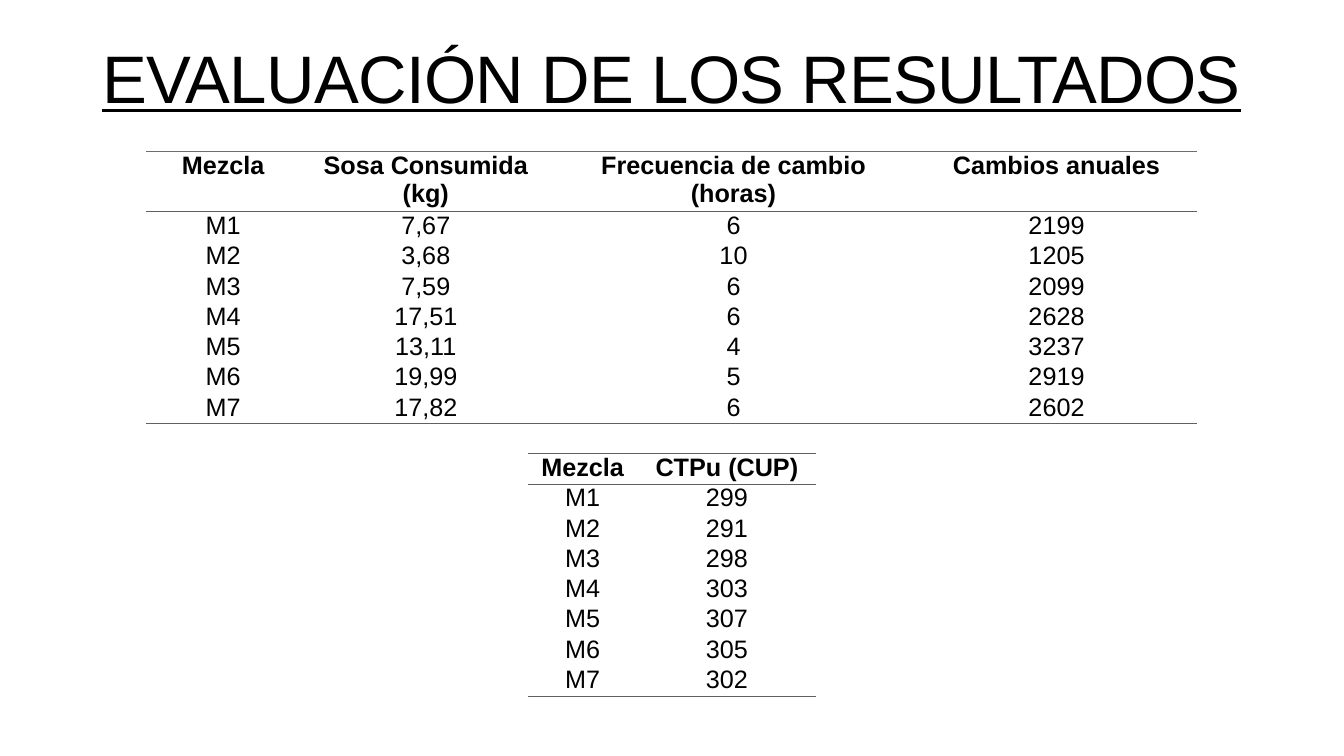
from lxml import etree
from pptx import Presentation
from pptx.dml.color import RGBColor
from pptx.enum.text import MSO_ANCHOR, PP_ALIGN
from pptx.oxml.ns import qn
from pptx.util import Cm, Pt

BLACK = RGBColor(0x00, 0x00, 0x00)
BLUE = RGBColor(0x44, 0x72, 0xC4)
GRAY = RGBColor(0x60, 0x60, 0x60)
CENTER = PP_ALIGN.CENTER
BOTTOM = MSO_ANCHOR.BOTTOM
TOP = MSO_ANCHOR.TOP
FONT = "Arial"
PLAIN = "{2D5ABB26-0587-4C30-8999-92F81FD0307C}"  # table style without grid
ROW = 0.71

MIXES = [f"M{n}" for n in range(1, 8)]
SODA = ["7,67", "3,68", "7,59", "17,51", "13,11", "19,99", "17,82"]
HOURS = ["6", "10", "6", "6", "4", "5", "6"]
YEARLY = ["2199", "1205", "2099", "2628", "3237", "2919", "2602"]
COSTS = ["299", "291", "298", "303", "307", "305", "302"]


def write(frame, text, size=18, bold=False, under=False, lead=None, track=None):
    par = frame.paragraphs[0]
    par.alignment = CENTER
    if lead:
        par.line_spacing = lead
    run = par.add_run()
    run.text = text
    font = run.font
    font.name, font.size = FONT, Pt(size)
    font.bold, font.underline = bold, under
    font.color.rgb = BLACK
    if track:
        run._r.get_or_add_rPr().set("spc", str(round(track * 100)))


def rule(cell, side, color, width):
    """Draw one border; lines must precede the fill in the cell."""
    props = cell._tc.get_or_add_tcPr()
    line = etree.Element(qn("a:" + side), w=str(Pt(width)))
    fill = etree.SubElement(line, qn("a:solidFill"))
    etree.SubElement(fill, qn("a:srgbClr"), val=str(color))
    spot = len(props.findall(qn("a:lnT")))
    props.insert(spot, line)


def add_title(slide, text, left, top, width, height):
    box = slide.shapes.add_textbox(Cm(left), Cm(top), Cm(width), Cm(height))
    frame = box.text_frame
    frame.word_wrap = True
    frame.vertical_anchor = BOTTOM
    write(frame, text, size=48, under=True, lead=0.85, track=-0.5)


def add_grid(slide, heads, columns, left, top, widths, head, edge, weight):
    rows = [heads, *zip(*columns)]
    high = head + ROW * (len(rows) - 1)
    frame = slide.shapes.add_table(len(rows), len(heads), Cm(left), Cm(top),
                                   Cm(sum(widths)), Cm(high))
    table = frame.table
    table._tbl.tblPr.find(qn("a:tableStyleId")).text = PLAIN
    table.first_row = table.horz_banding = False
    for col, width in zip(table.columns, widths):
        col.width = Cm(width)
    for r, values in enumerate(rows):
        table.rows[r].height = Cm(ROW if r else head)
        for c, value in enumerate(values):
            cell = table.cell(r, c)
            cell.margin_left = cell.margin_right = Cm(0.18)
            cell.margin_top = cell.margin_bottom = 0
            cell.vertical_anchor = TOP
            cell.fill.background()
            write(cell.text_frame, value, bold=r == 0)
            if r == 0:
                rule(cell, "lnT", edge, weight)
            if r in (0, len(rows) - 1):
                rule(cell, "lnB", GRAY, 0.5)


def main():
    deck = Presentation()
    deck.slide_width, deck.slide_height = Cm(33.87), Cm(19.05)
    slide = deck.slides.add_slide(deck.slide_layouts[6])

    # Title
    add_title(slide, "EVALUACIÓN DE LOS RESULTADOS", 1.52, -0.97, 30.81, 4.04)

    # Soda use and changes per mix
    add_grid(slide,
             ["Mezcla", "Sosa Consumida (kg)", "Frecuencia de cambio (horas)",
              "Cambios anuales"],
             [MIXES, SODA, HOURS, YEARLY],
             3.68, 3.81, [3.89, 6.32, 9.19, 7.09], 2 * ROW, BLUE, 1)

    # Cost per mix
    add_grid(slide, ["Mezcla", "CTPu (CUP)"], [MIXES, COSTS],
             13.3, 11.43, [2.77, 4.5], ROW, GRAY, 0.5)

    deck.save("out.pptx")


if __name__ == "__main__":
    main()
